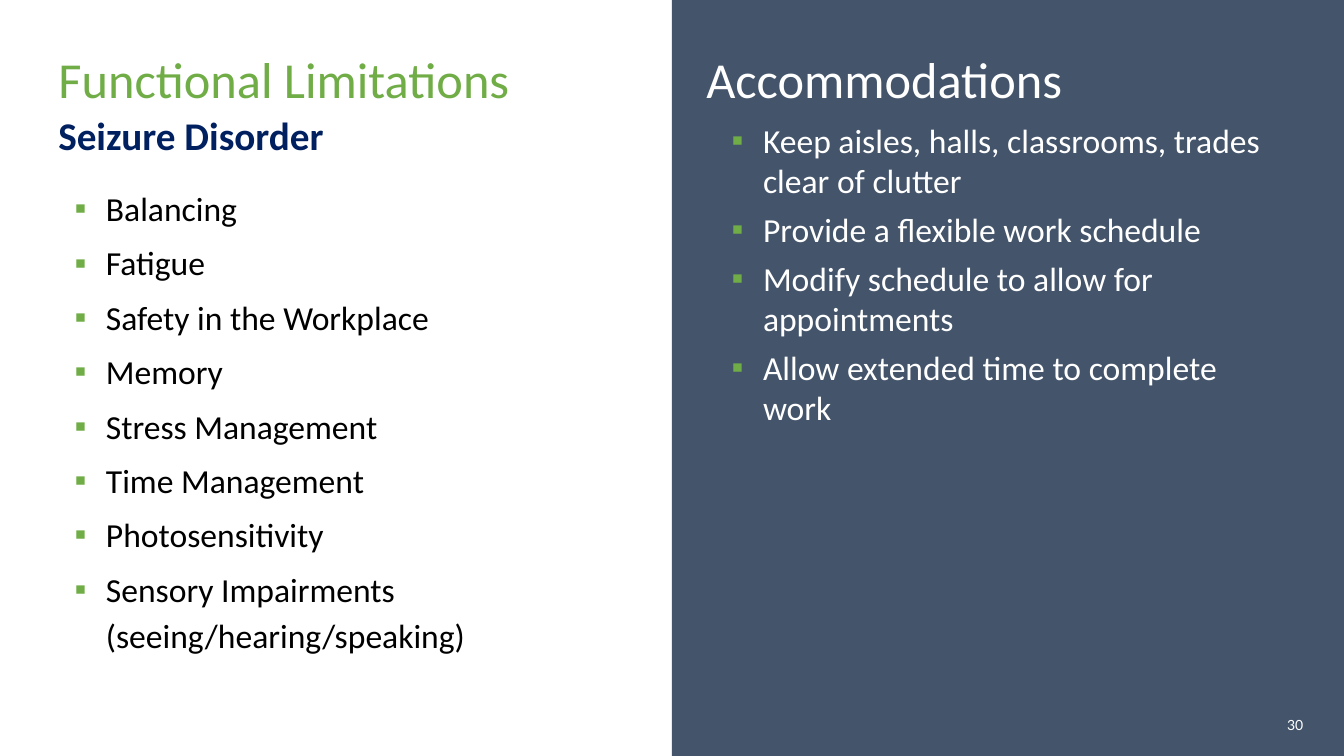
from pptx import Presentation
from pptx import util as u
from pptx.dml.color import RGBColor
from pptx.enum import shapes, text
from lxml import etree

# Content
LIMITATIONS_TITLE = "Functional Limitations"
CONDITION = "Seizure Disorder"
LIMITATIONS = [
    "Balancing",
    "Fatigue",
    "Safety in the Workplace",
    "Memory",
    "Stress Management",
    "Time Management",
    "Photosensitivity",
    "Sensory Impairments (seeing/hearing/speaking)",
]
ACCOMMODATIONS_TITLE = "Accommodations"
ACCOMMODATIONS = [
    "Keep aisles, halls, classrooms, trades clear of clutter",
    "Provide a flexible work schedule",
    "Modify schedule to allow for appointments",
    "Allow extended time to complete work",
]
PAGE = "30"

THEME = {
    "green": "70AD47", "navy": "002060", "slate": "44546A",
    "black": "000000", "white": "FFFFFF",
    "font": "Calibri", "page_font": "Lato",
    "title": 36, "subtitle": 28, "body": 24, "page": 10,
}

# Layout in centimetres
WIDTH, HEIGHT = 33.87, 19.05
HALF = WIDTH / 2
HEAD_TOP, HEAD_W, HEAD_H = 1.09, 15.7, 1.8
LEFT_X, RIGHT_X = 1.22, 17.55
INDENT = 0.79


def rgb(name):
    return RGBColor.from_string(THEME[name])


def place(sp, x, y, w, h):
    box = {"left": x, "top": y, "width": w, "height": h}
    for name, value in box.items():
        setattr(sp, name, u.Cm(value))


def write(sp, lines, size, color, font="font", bold=False,
          align=text.PP_ALIGN.LEFT, anchor=text.MSO_ANCHOR.TOP):
    tf = sp.text_frame
    frame = {"word_wrap": True, "auto_size": text.MSO_AUTO_SIZE.NONE,
             "vertical_anchor": anchor}
    for name, value in frame.items():
        setattr(tf, name, value)
    style = {"name": THEME[font], "size": u.Pt(THEME[size]), "bold": bold}
    for i, line in enumerate(lines):
        p = tf.add_paragraph() if i else tf.paragraphs[0]
        p.alignment = align
        r = p.add_run()
        r.text = line
        for name, value in style.items():
            setattr(r.font, name, value)
        r.font.color.rgb = rgb(color)


def add_bullets(sp, spacing):
    for p in sp.text_frame.paragraphs:
        p.space_before = u.Pt(6)
        p.line_spacing = spacing
        pPr = p._p.get_or_add_pPr()
        pPr.set("marL", str(u.Cm(INDENT)))
        pPr.set("indent", str(-u.Cm(INDENT)))
        ns = pPr.nsmap["a"]
        bu_color = etree.SubElement(pPr, f"{{{ns}}}buClr")
        etree.SubElement(bu_color, f"{{{ns}}}srgbClr", val=THEME["green"])
        etree.SubElement(pPr, f"{{{ns}}}buFont", typeface="Arial")
        etree.SubElement(pPr, f"{{{ns}}}buChar", char="▪")


def add_text(s, box, lines, size, color, **options):
    sp = s.shapes.add_textbox(*map(u.Cm, box))
    write(sp, lines, size, color, **options)
    return sp


def add_block(s, *box):
    sp = s.shapes.add_shape(shapes.MSO_SHAPE.RECTANGLE, *map(u.Cm, box))
    sp.shadow.inherit = False
    sp.fill.solid()
    sp.fill.fore_color.rgb = rgb("slate")
    sp.line.fill.background()
    return sp


def main():
    prs = Presentation()
    prs.slide_width, prs.slide_height = u.Cm(WIDTH), u.Cm(HEIGHT)
    s = prs.slides.add_slide(prs.slide_layouts[5])

    # Right panel
    add_block(s, HALF, 0, HALF, HEIGHT)

    # Headings
    place(s.shapes.title, LEFT_X, HEAD_TOP, HEAD_W, HEAD_H)
    write(s.shapes.title, [LIMITATIONS_TITLE], "title", "green")
    add_text(s, (LEFT_X, 2.67, HEAD_W, 1.45), [CONDITION],
             "subtitle", "navy", bold=True)
    add_text(s, (RIGHT_X, HEAD_TOP, HEAD_W, HEAD_H), [ACCOMMODATIONS_TITLE],
             "title", "white")

    # Bulleted lists
    for box, lines, color, spacing in (
        ((1.63, 4.47, 12.52, 13.06), LIMITATIONS, "black", 1.14),
        ((18.19, 2.9, 14.45, 13.18), ACCOMMODATIONS, "white", 1.0),
    ):
        add_bullets(add_text(s, box, lines, "body", color), spacing)

    # Page number
    page = add_block(s, 31.52, 17.88, 2.24, 0.79)
    write(page, [PAGE], "page", "white", font="page_font",
          align=text.PP_ALIGN.CENTER, anchor=text.MSO_ANCHOR.MIDDLE)

    prs.save("out.pptx")


if __name__ == "__main__":
    main()
